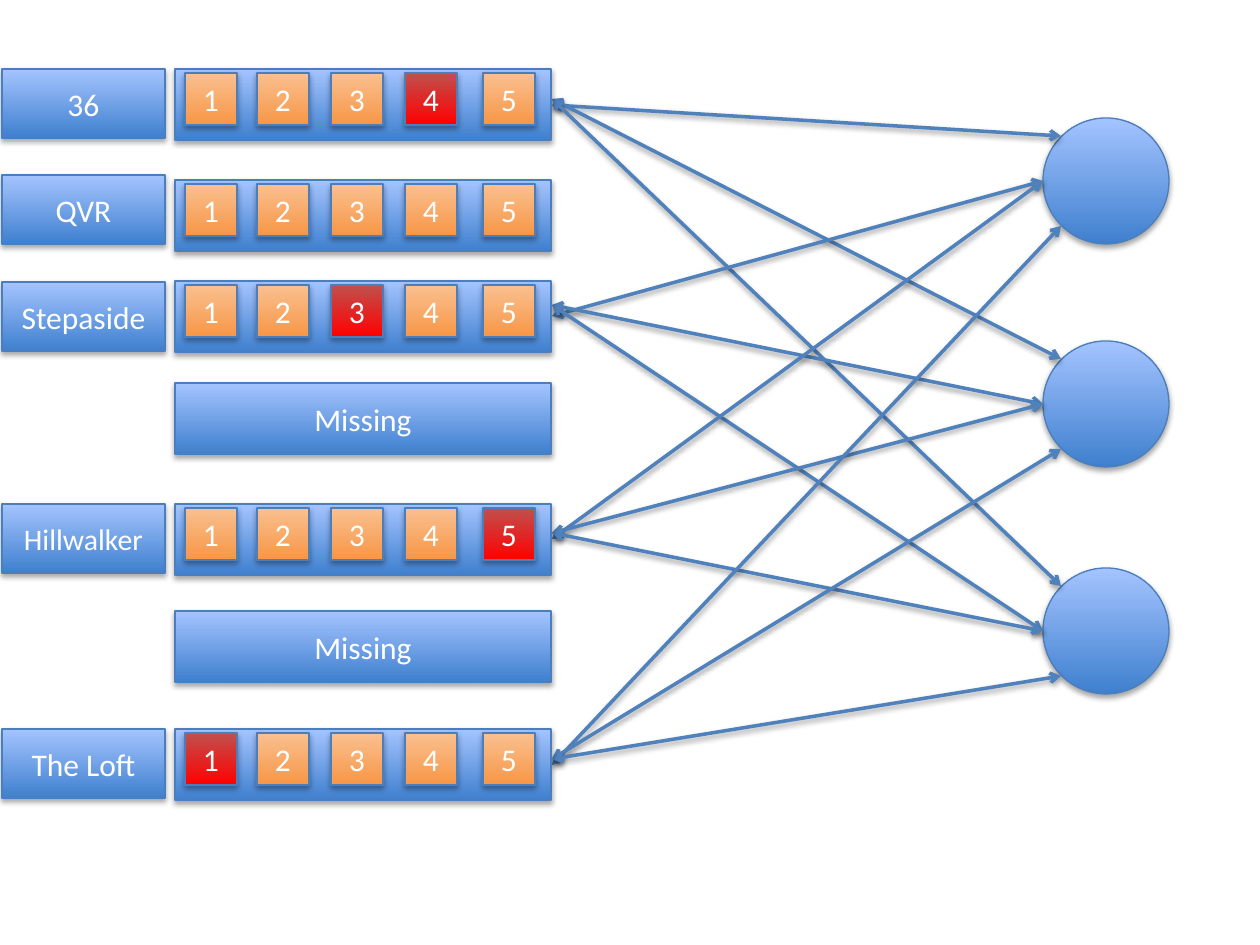
from dataclasses import dataclass

from lxml.etree import SubElement
from pptx import Presentation
from pptx.dml.color import RGBColor
from pptx.enum.shapes import MSO_CONNECTOR, MSO_SHAPE
from pptx.enum.text import MSO_ANCHOR, PP_ALIGN
from pptx.oxml.ns import qn
from pptx.util import Emu, Pt

PIXEL = 914400 / 126


@dataclass(frozen=True)
class Theme:
    blue: tuple = ("3F80CE", "A4C4FF")
    orange: tuple = ("F79646", "FAC090")
    red: tuple = ("FF0000", "C0504D")
    outline: str = "4B7EBC"
    link: str = "4F81BD"
    text: str = "FFFFFF"
    font: str = "Calibri"
    size: int = 18
    small_size: int = 17
    outline_width: float = 0.75
    link_width: float = 2


THEME = Theme()
MOVIES = [
    {"title": "36", "title_top": 69, "top": 69, "rating": 4, "low": 36, "high": 30, "port": (18, 18)},
    {"title": "QVR", "title_top": 175, "top": 180, "rating": None},
    {"title": "Stepaside", "title_top": 282, "top": 281, "rating": 3, "low": 35, "high": 24, "port": (0, 63)},
    {"title": "Hillwalker", "title_top": 504, "top": 504, "rating": 5, "low": 35, "high": 29, "port": (0, 63)},
    {"title": "The Loft", "title_top": 729, "top": 729, "rating": 1, "low": 36, "high": 30, "port": (18, 108)},
]
MISSING_TOPS = [383, 611]
BAR_LEFT, BAR_WIDTH, BAR_HEIGHT = 175, 376, 71
SCORE_OFFSETS = [10, 82, 156, 230, 308]
UNIT_LEFT, UNIT_SIZE = 1043, 126
UNIT_TOPS = [118, 341, 568]


def px(length):
    return Emu(round(length * PIXEL))


def set_attributes(target, values):
    for name, value in values.items():
        setattr(target, name, value)


def add_shadow(effects, distance, opacity):
    shadow = SubElement(effects, qn("a:outerShdw"), blurRad="40000", dist=str(distance),
                        dir="5400000", rotWithShape="0")
    color = SubElement(shadow, qn("a:srgbClr"), val="000000")
    SubElement(color, qn("a:alpha"), val=str(opacity * 1000))


def add_block(shapes, box, colors, text=None, kind=MSO_SHAPE.RECTANGLE, size=THEME.size):
    shape = shapes.add_shape(kind, *map(px, box))
    shape.fill.gradient()
    shape.fill.gradient_angle = 90
    for position, (stop, color) in enumerate(zip(shape.fill.gradient_stops, colors)):
        stop.position = position
        stop.color.rgb = RGBColor.from_string(color)
    shape.line.color.rgb = RGBColor.from_string(THEME.outline)
    shape.line.width = Pt(THEME.outline_width)
    shape.shadow.inherit = False
    add_shadow(shape._element.spPr.find(qn("a:effectLst")), 23000, 35)
    if text:
        frame = shape.text_frame
        set_attributes(frame, {"word_wrap": True, "vertical_anchor": MSO_ANCHOR.MIDDLE})
        paragraph = frame.paragraphs[0]
        set_attributes(paragraph, {"text": text, "alignment": PP_ALIGN.CENTER})
        set_attributes(paragraph.font, {"name": THEME.font, "size": Pt(size)})
        paragraph.font.color.rgb = RGBColor.from_string(THEME.text)


def add_link(shapes, start, end):
    connector = shapes.add_connector(MSO_CONNECTOR.STRAIGHT, *map(px, (*start, *end)))
    connector.line.color.rgb = RGBColor.from_string(THEME.link)
    connector.line.width = Pt(THEME.link_width)
    line = connector.line._get_or_add_ln()
    for tag in ("a:headEnd", "a:tailEnd"):
        SubElement(line, qn(tag), type="arrow")
    add_shadow(SubElement(connector._element.spPr, qn("a:effectLst")), 20000, 38)


def add_rating_bar(shapes, box, rating):
    left, top, width, height = box
    add_block(shapes, box, THEME.blue)
    for score, offset in enumerate(SCORE_OFFSETS, start=1):
        colors = THEME.red if score == rating else THEME.orange
        add_block(shapes, (left + offset, top + 4, 52, 52), colors, str(score))


def add_hidden_units(shapes, left, size):
    for top in UNIT_TOPS:
        add_block(shapes, (left, top, size, size), THEME.blue, kind=MSO_SHAPE.OVAL)


def add_links(shapes, left, right):
    for movie in MOVIES:
        if movie["rating"] is None:
            continue
        port_x, port_y = movie["port"]
        for index, unit_top in enumerate(UNIT_TOPS):
            offset = movie["high"] if index else movie["low"]
            add_link(shapes, (left, movie["top"] + offset), (right + port_x, unit_top + port_y))


def add_ratings(shapes, left, width, height):
    for movie in MOVIES:
        add_rating_bar(shapes, (left, movie["top"], width, height), movie["rating"])
    for top in MISSING_TOPS:
        add_block(shapes, (left, top, width, height), THEME.blue, "Missing")


def add_titles(shapes, left, width, height):
    for movie in MOVIES:
        size = THEME.small_size if len(movie["title"]) > 9 else THEME.size
        add_block(shapes, (left, movie["title_top"], width, height), THEME.blue,
                  movie["title"], size=size)


def main():
    presentation = Presentation()
    set_attributes(presentation, {"slide_width": px(1260), "slide_height": px(945)})
    slide = presentation.slides.add_slide(presentation.slide_layouts[6])
    add_hidden_units(slide.shapes, UNIT_LEFT, UNIT_SIZE)
    add_links(slide.shapes, BAR_LEFT + BAR_WIDTH + 1, UNIT_LEFT)
    add_ratings(slide.shapes.add_group_shape().shapes, BAR_LEFT, BAR_WIDTH, BAR_HEIGHT)
    add_titles(slide.shapes.add_group_shape().shapes, 2, 163, 69)
    presentation.save("out.pptx")


if __name__ == "__main__":
    main()
